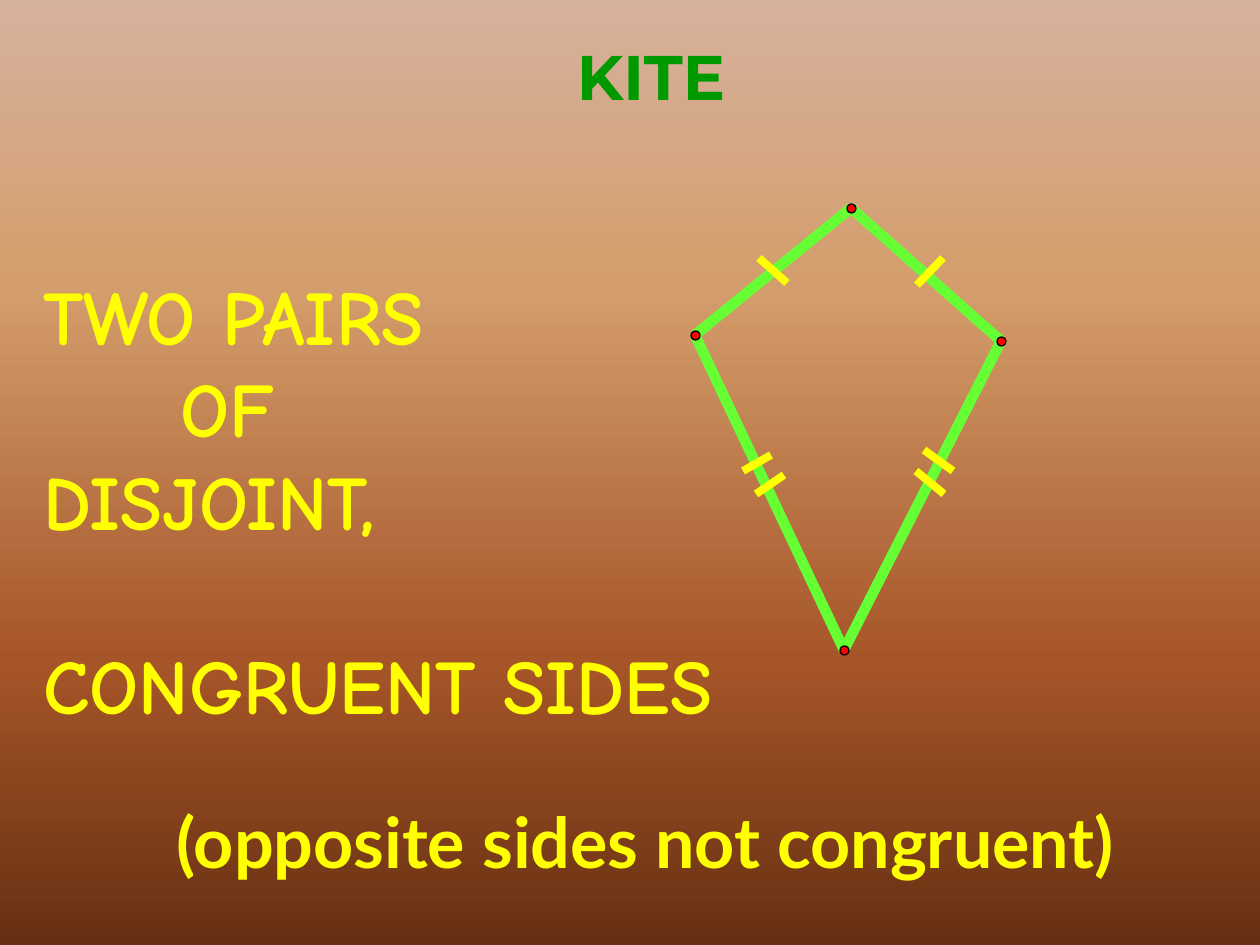
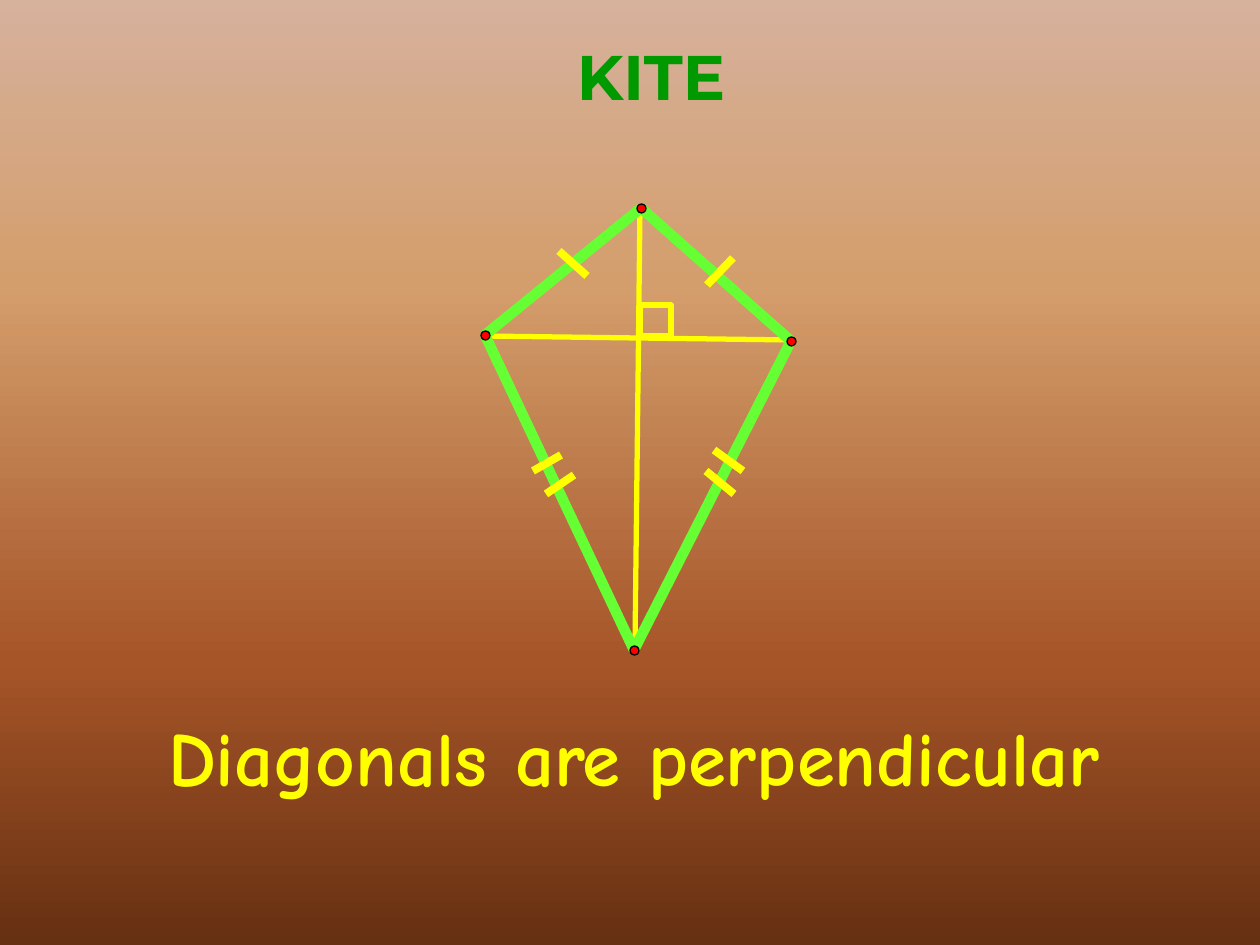
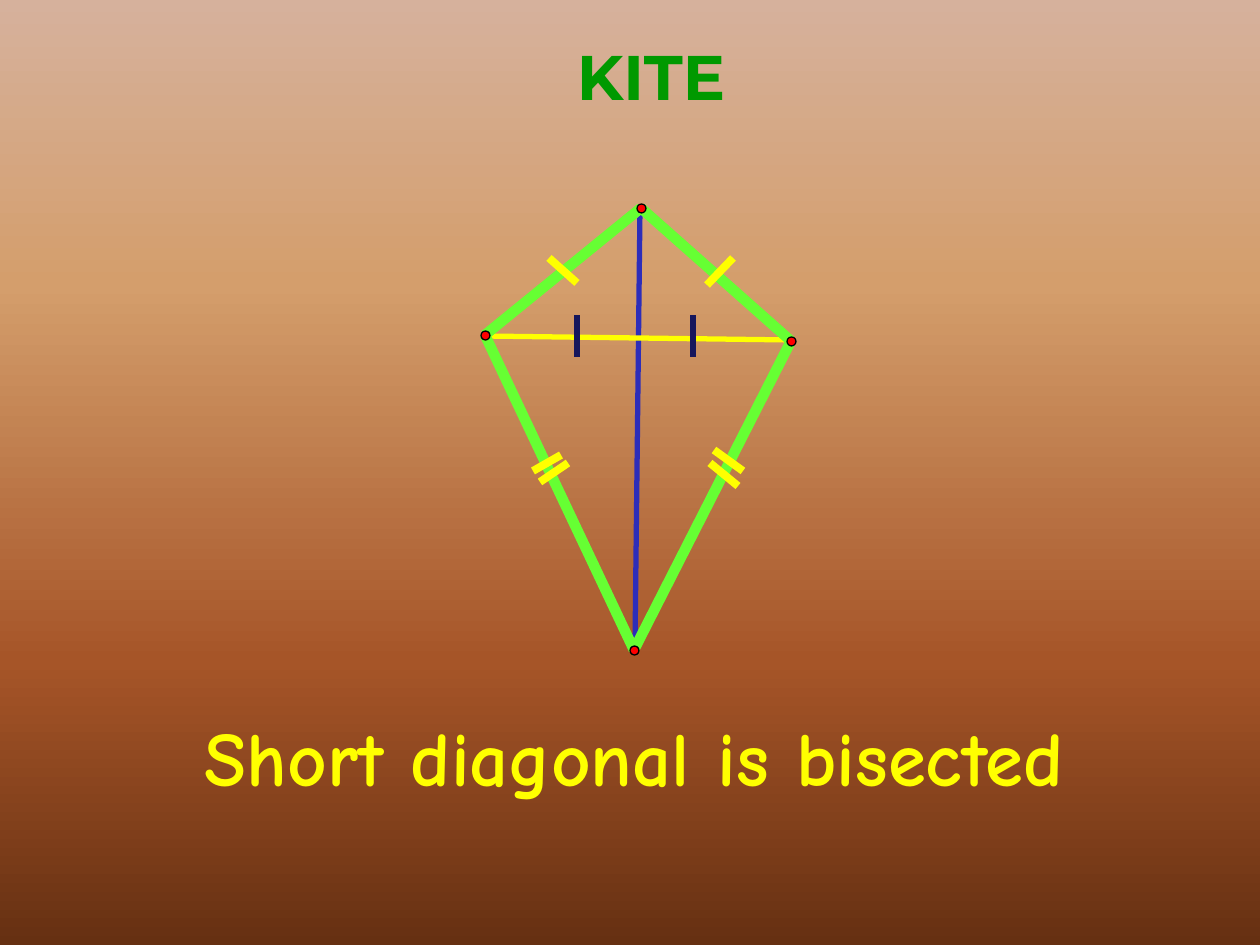
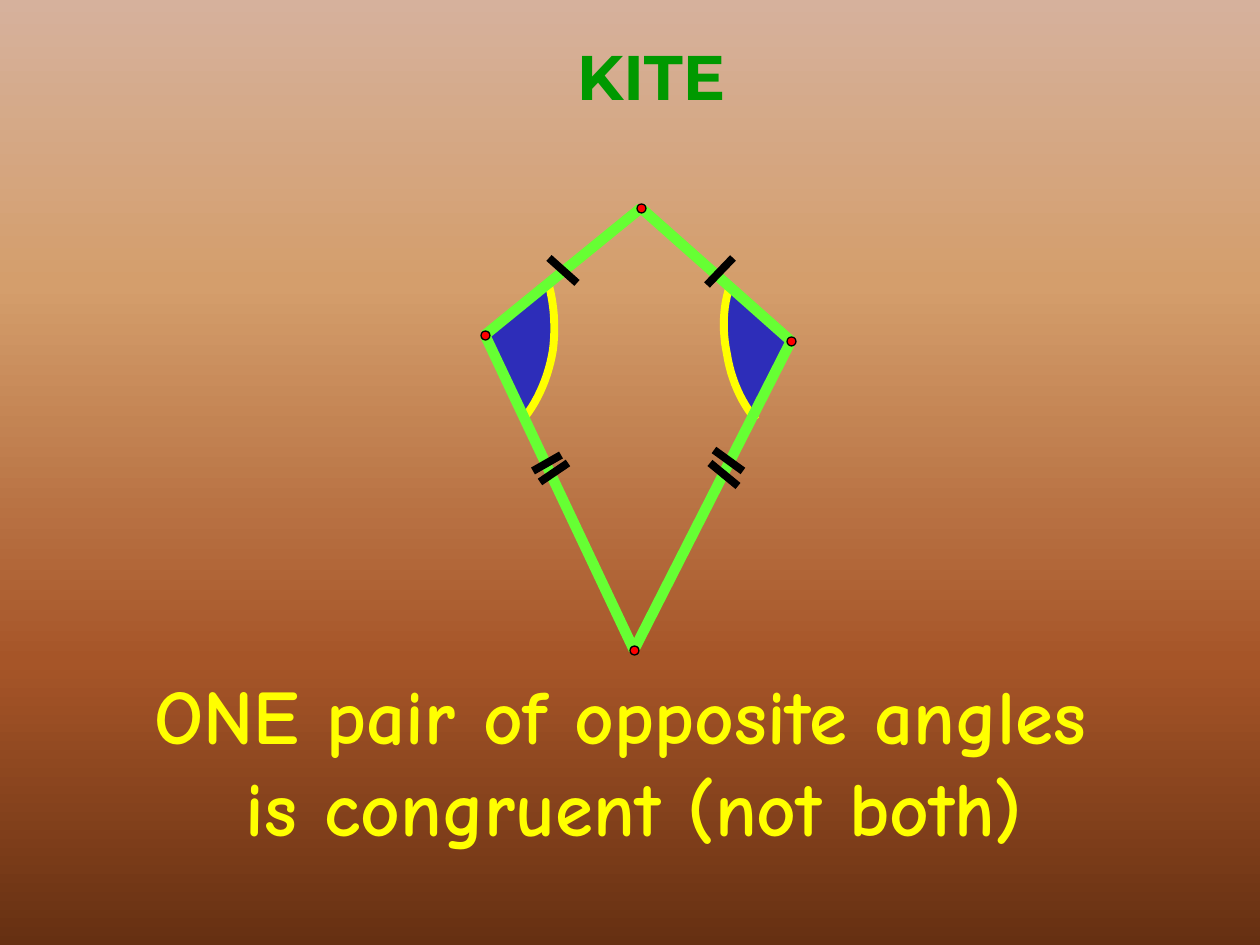
from copy import deepcopy
from lxml.etree import SubElement
from pptx import Presentation
from pptx.dml.color import RGBColor
from pptx.enum.shapes import MSO_CONNECTOR, MSO_SHAPE
from pptx.enum.text import MSO_ANCHOR, MSO_AUTO_SIZE, PP_ALIGN
from pptx.oxml.ns import qn
from pptx.util import Emu, Pt

GREEN = RGBColor(0x00, 0x99, 0x00)
LIME = RGBColor(0x66, 0xFF, 0x33)
YELLOW = RGBColor(0xFF, 0xFF, 0x00)
RED = RGBColor(0xFF, 0x00, 0x00)
BLACK = RGBColor(0x00, 0x00, 0x00)
BLUE = RGBColor(0x2D, 0x2D, 0xB9)
NAVY = RGBColor(0x17, 0x17, 0x5C)
SKY = [
    (0, RGBColor(0xD6, 0xB1, 0x9C)),
    (0.3, RGBColor(0xD4, 0x9E, 0x6C)),
    (0.7, RGBColor(0xA6, 0x55, 0x28)),
    (1, RGBColor(0x66, 0x30, 0x12)),
]
HEAD, HAND, PLAIN = "Montserrat", "Comic Neue", "Lato"

# Corners of the kite, relative to its box
TOP, LEFT, RIGHT, BASE = (156, 0), (0, 127), (306, 133), (149, 442)
MID = (485, 208)
SIDE = (695, 208)


def px(n):
    return Emu(round(n * 914400 / 126))


def move(point, by):
    return point[0] + by[0], point[1] + by[1]


# Shared look
def paint(master):
    fill = master.background.fill
    fill.gradient()
    fill.gradient_angle = 270
    stops = next(master.element.iter(qn("a:gsLst")))
    for stop in list(stops):
        stops.append(deepcopy(stop))
    for stop, (place, color) in zip(fill.gradient_stops, SKY):
        stop.position = place
        stop.color.rgb = color


def place(shape, left, top, width, height):
    shape.left, shape.top = px(left), px(top)
    shape.width, shape.height = px(width), px(height)


def style(para, name, size, color):
    for run in para.runs:
        font = run.font
        font.name, font.size, font.bold = name, Pt(size), True
        font.color.rgb = color


def title(slide):
    shape = slide.shapes.title
    place(shape, 189, 31, 924, 136)
    frame = shape.text_frame
    frame.text = "KITE"
    frame.word_wrap = False
    frame.auto_size = MSO_AUTO_SIZE.NONE
    frame.vertical_anchor = MSO_ANCHOR.TOP
    para = frame.paragraphs[0]
    para.alignment = PP_ALIGN.CENTER
    style(para, HEAD, 36, GREEN)
    # Bright outline around the letters
    props = para.runs[0].font._element
    edge = props.makeelement(qn("a:ln"), {"w": str(Pt(3))})
    fill = SubElement(edge, qn("a:solidFill"))
    SubElement(fill, qn("a:srgbClr"), val="00FF00")
    props.insert(0, edge)


def body(slide, box, lines, align=PP_ALIGN.CENTER):
    shape = slide.placeholders[1]
    place(shape, *box)
    frame = shape.text_frame
    frame.text = "\n".join(lines)
    frame.word_wrap = True
    frame.auto_size = MSO_AUTO_SIZE.SHAPE_TO_FIT_TEXT
    frame.vertical_anchor = MSO_ANCHOR.TOP
    for para in frame.paragraphs:
        para.alignment = align
        para.space_before = Pt(0)
        props = para._p.get_or_add_pPr()
        props.set("marL", "0")
        props.set("indent", "0")
        SubElement(props, qn("a:buNone"))
        style(para, HAND, 44, YELLOW)
    return frame.paragraphs


# Drawing
def draw(shapes, box, start, end, color, width):
    (x1, y1), (x2, y2) = move(start, box), move(end, box)
    line = shapes.add_connector(
        MSO_CONNECTOR.STRAIGHT, px(x1), px(y1), px(x2), px(y2))
    line.line.color.rgb = color
    line.line.width = Pt(width)
    SubElement(line._element.spPr, qn("a:effectLst"))


def dot(shapes, box, point):
    x, y = move(point, box)
    shape = shapes.add_shape(
        MSO_SHAPE.OVAL, px(x - 4), px(y - 4), px(9), px(9))
    shape.shadow.inherit = False
    shape.fill.solid()
    shape.fill.fore_color.rgb = RED
    shape.line.color.rgb = BLACK
    shape.line.width = Pt(0)


def kite(slide, box, color=YELLOW, tight=False, lift=(0, 0)):
    shapes = slide.shapes.add_group_shape().shapes
    for start, end in ((TOP, LEFT), (TOP, RIGHT), (LEFT, BASE), (RIGHT, BASE)):
        draw(shapes, box, start, end, LIME, 6)
    # Congruence ticks; the lower pairs may sit closer together
    near, far = ((-6, -12), (4, -8)) if tight else ((0, 0), (0, 0))
    ticks = [
        (move((64, 50), lift), move((92, 75), lift)),
        ((248, 50), (222, 77)),
        ((76, 247), (48, 263)),
        (move((89, 267), near), move((61, 286), near)),
        ((229, 242), (258, 263)),
        (move((221, 263), far), move((249, 286), far)),
    ]
    for start, end in ticks:
        draw(shapes, box, start, end, color, 4.5)
    for point in (RIGHT, TOP, LEFT, BASE):
        dot(shapes, box, point)


def cross(slide, box, color):
    draw(slide.shapes, box, (155, 2), (150, 440), color, 3)
    draw(slide.shapes, box, (-2, 128), (305, 132), YELLOW, 3)


def corner(slide, box):
    x, y = move((155, 97), box)
    shape = slide.shapes.add_shape(
        MSO_SHAPE.RECTANGLE, px(x), px(y), px(31), px(31))
    shape.shadow.inherit = False
    shape.fill.background()
    shape.line.color.rgb = YELLOW
    shape.line.width = Pt(3)


def curve(a, b, c, d, steps=12):
    def blend(t, *v):
        s = 1 - t
        return s**3 * v[0] + 3 * s * s * t * v[1] + 3 * s * t * t * v[2] + t**3 * v[3]
    return [tuple(blend(i / steps, *axis) for axis in zip(a, b, c, d))
            for i in range(steps + 1)]


def trace(slide, box, points, close):
    spots = [tuple(px(v) for v in move(point, box)) for point in points]
    pen = slide.shapes.build_freeform(*spots[0], scale=1.0)
    pen.add_line_segments(spots[1:], close=close)
    shape = pen.convert_to_shape()
    shape.shadow.inherit = False
    return shape


def angle(slide, box, knots, tip):
    arc = curve(*knots[:4]) + curve(*knots[3:])[1:]
    fan = trace(slide, box, arc + [tip], True)
    fan.fill.solid()
    fan.fill.fore_color.rgb = BLUE
    fan.line.fill.background()
    rim = trace(slide, box, arc, False)
    rim.fill.background()
    rim.line.color.rgb = YELLOW
    rim.line.width = Pt(4.5)


# Slides
def sides(slide):
    kite(slide, SIDE)
    lines = ["TWO PAIRS", "OF", "DISJOINT,", "CONGRUENT SIDES",
             "(opposite sides not congruent)"]
    paras = body(slide, (31, 262, 1229, 633), lines, PP_ALIGN.LEFT)
    paras[1]._p.get_or_add_pPr().set("marL", str(px(137)))
    paras[3].space_before = px(92)
    last = paras[4]
    last.space_before = px(69)
    last.alignment = PP_ALIGN.CENTER
    style(last, PLAIN, 40, YELLOW)


def square(slide):
    cross(slide, MID, YELLOW)
    kite(slide, MID, lift=(10, -7))
    corner(slide, MID)
    body(slide, (31, 703, 1207, 105), ["Diagonals are perpendicular"])


def halves(slide):
    cross(slide, MID, BLUE)
    kite(slide, MID, tight=True)
    for x in (92, 208):
        draw(slide.shapes, MID, (x, 107), (x, 149), NAVY, 3)
    body(slide, (31, 703, 1207, 105), ["Short diagonal is bisected"])


def angles(slide):
    angle(slide, MID, [(245, 78), (238, 98), (237, 122), (242, 146),
                       (246, 171), (256, 194), (271, 212)], (311, 133))
    angle(slide, MID, [(63, 74), (69, 94), (71, 118), (68, 142),
                       (64, 167), (54, 191), (40, 209)], (-2, 132))
    kite(slide, MID, BLACK, tight=True)
    body(slide, (31, 661, 1207, 199),
         ["ONE pair of opposite angles ", "is congruent (not both)"])


def main():
    deck = Presentation()
    deck.slide_width, deck.slide_height = px(1260), px(945)
    paint(deck.slide_master)
    for build in (sides, square, halves, angles):
        slide = deck.slides.add_slide(deck.slide_layouts[1])
        title(slide)
        build(slide)
    deck.save("out.pptx")


if __name__ == "__main__":
    main()
